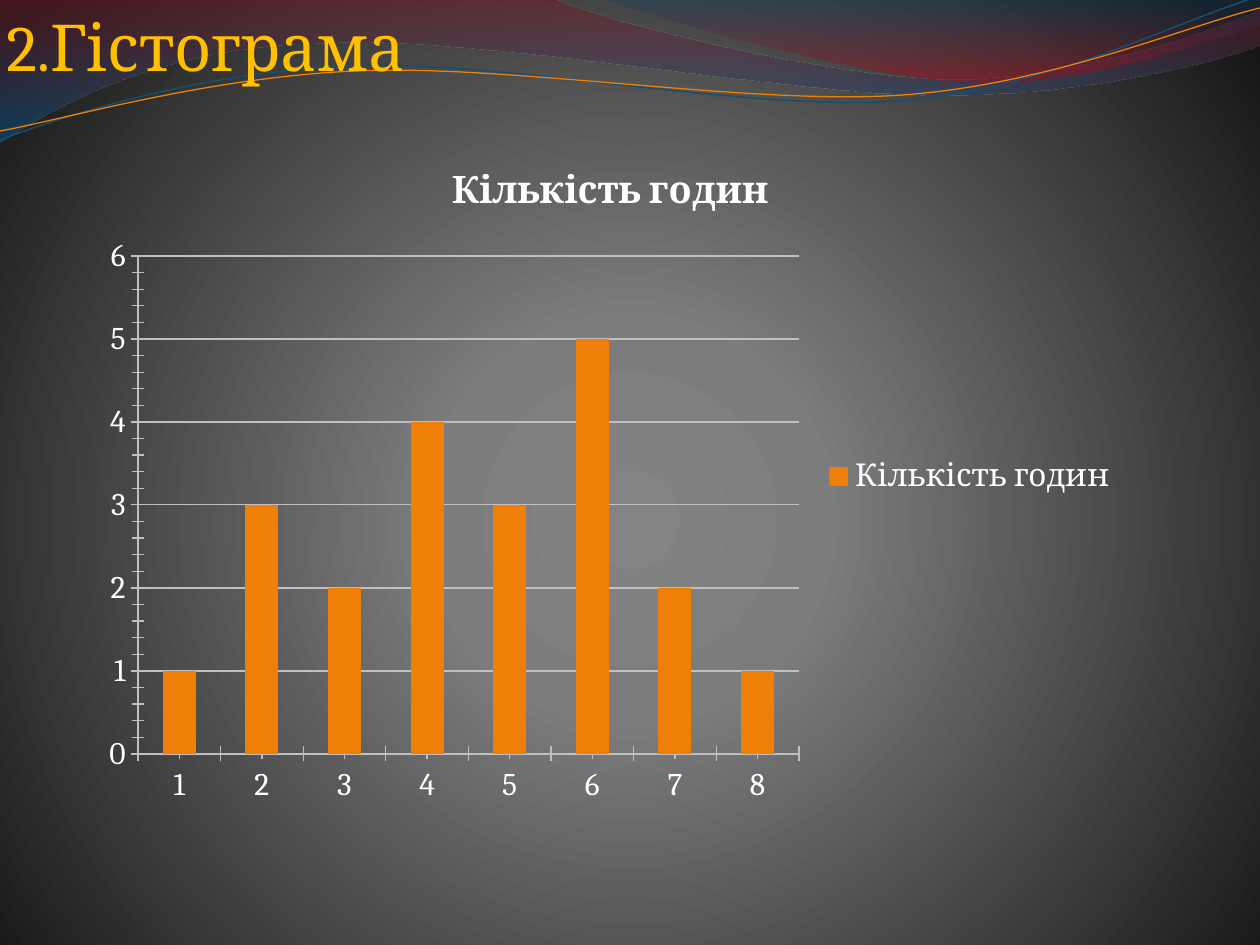
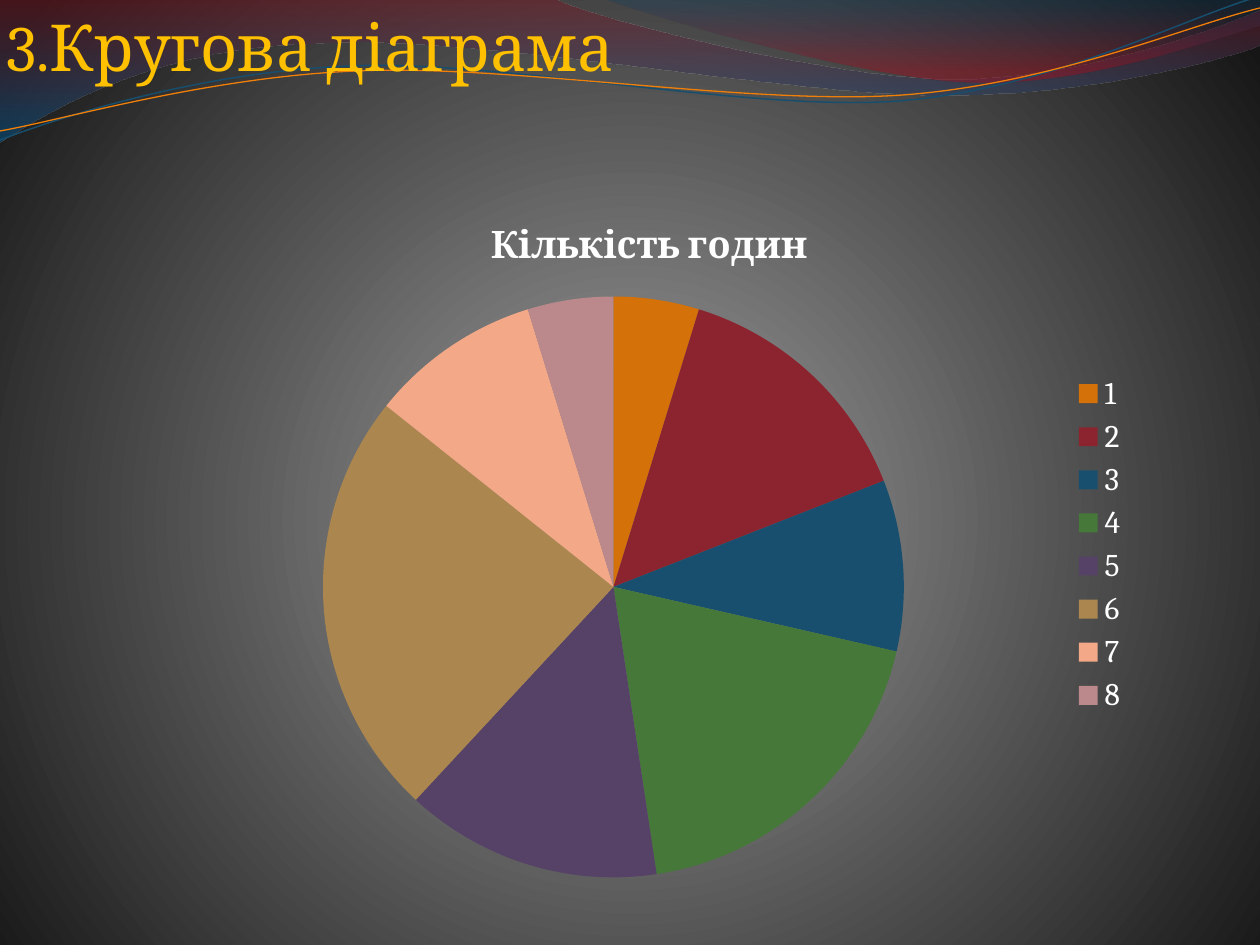
"""Build two slides that show study hours as a histogram and as a pie chart."""
from lxml import etree
from pptx import Presentation, util as u
from pptx.chart.data import CategoryChartData
from pptx.dml.color import RGBColor
from pptx.enum import chart as charts, text
from pptx.oxml import parse_xml
from pptx.oxml.ns import nsdecls, qn

EMU_PER_PX = 914400 / 126
FONT = "Cambria"
COLORS = {
    "title": "FFC000", "white": "FFFFFF", "axis": "C0C0C0",
    "orange": "F07F09", "blue": "184E6D",
}
PIE_COLORS = ["D57109", "8C242F", "184F6F", "46783A",
              "564167", "AB874F", "F3A887", "BB898B"]

SERIES_NAME = "Кількість годин"
HOURS = {"1": 1, "2": 3, "3": 2, "4": 4, "5": 3, "6": 5, "7": 2, "8": 1}
TITLE_BOX = (0, 0, 1071, 208)
SLIDES = [
    {"title": "2.Гістограма", "kind": charts.XL_CHART_TYPE.COLUMN_CLUSTERED,
     "frame": (88, 137, 1043, 679), "plot": (138, 256, 661, 498),
     "heading": (445, 158)},
    {"title": "3.Кругова діаграма", "kind": charts.XL_CHART_TYPE.PIE,
     "frame": (157, 193, 984, 703), "plot": (323, 296, 581, 582),
     "heading": (484, 213)},
]

BACKGROUND_STOPS = [(0, "848484", 100), (25, "7C7C7C", 100), (100, "161616", 100)]
RADIAL = ('<a:path path="circle"><a:fillToRect l="10000" t="110000" '
          'r="10000" b="100000"/></a:path>')
DOWNWARD = '<a:lin ang="5400000" scaled="1"/>'
WAVES = [
    {"start": (0, 0), "stops": [(0, "7E1621", 45), (100, "005689", 55)],
     "steps": [(554, -1), (600, 21, 837, 79, 955, 79),
               (1075, 79, 1207, 33, 1260, 11), (1261, 45),
               (1239, 55, 1096, 96, 940, 95), (784, 95, 481, 35, 324, 43),
               (163, 45, 58, 105, -1, 142)]},
    {"start": (604, -1), "stops": [(0, "094467", 30), (80, "A10F1F", 45)],
     "steps": [(641, 14, 859, 78, 969, 82), (1079, 87, 1211, 40, 1260, 26),
               (1260, 0)]},
    {"start": (0, 140), "line": ("blue", 0.85),
     "steps": [(60, 117, 199, 72, 349, 66), (498, 59, 747, 112, 898, 101),
               (1050, 89, 1182, 19, 1257, -3)]},
    {"start": (0, 131), "line": ("orange", 0.75),
     "steps": [(59, 121, 207, 77, 357, 71), (508, 64, 752, 106, 903, 95),
               (1053, 84, 1186, 26, 1260, 8)]},
]


def px(*lengths):
    return [u.Emu(round(length * EMU_PER_PX)) for length in lengths]


def rgb(name):
    return RGBColor.from_string(COLORS.get(name, name))


def paint_gradient(fill, element, stops, direction):
    fill.solid()
    solid = next(element.iter(qn("a:solidFill")))
    marks = "".join(
        f'<a:gs pos="{position * 1000}"><a:srgbClr val="{color}">'
        f'<a:alpha val="{alpha * 1000}"/></a:srgbClr></a:gs>'
        for position, color, alpha in stops)
    gradient = parse_xml(f'<a:gradFill {nsdecls("a")} rotWithShape="1">'
                         f'<a:gsLst>{marks}</a:gsLst>{direction}</a:gradFill>')
    solid.getparent().replace(solid, gradient)


def build_wave(slide, start, steps, closed):
    points = [pair for step in steps for pair in zip(step[::2], step[1::2])]
    builder = slide.shapes.build_freeform(*start, scale=EMU_PER_PX)
    builder.add_line_segments(points, close=closed)
    shape = builder.convert_to_shape()
    segments = iter(list(shape.element.iter(qn("a:lnTo"))))
    for step in steps:
        parts = [next(segments) for _ in range(len(step) // 2)]
        if len(parts) == 3:
            curve = etree.Element(qn("a:cubicBezTo"))
            parts[0].addprevious(curve)
            for part in parts:
                curve.append(part[0])
                part.getparent().remove(part)
    return shape


def add_waves(slide, master):
    for index, wave in enumerate(WAVES):
        shape = build_wave(slide, wave["start"], wave["steps"], "stops" in wave)
        shape.shadow.inherit = False
        if "stops" in wave:
            paint_gradient(shape.fill, shape.element, wave["stops"], DOWNWARD)
            shape.line.fill.background()
        else:
            color, width = wave["line"]
            shape.fill.background()
            shape.line.color.rgb = rgb(color)
            shape.line.width = u.Pt(width)
        shape.element.nvSpPr.cNvPr.id = 100 + index
        master.element.cSld.spTree.insert(2 + index, shape.element)


def format_font(font, size, color="white", bold=False):
    font.name, font.size, font.bold = FONT, u.Pt(size), bold
    font.color.rgb = rgb(color)


def write_text(frame, content, **style):
    paragraph = frame.paragraphs[0]
    run = paragraph.add_run()
    run.text = content
    format_font(run.font, **style)
    return paragraph


def add_title(slide, content):
    title = slide.shapes.title
    title.left, title.top, title.width, title.height = px(*TITLE_BOX)
    frame = title.text_frame
    frame.margin_left = frame.margin_right = u.Inches(0.05)
    frame.margin_top = frame.margin_bottom = u.Inches(0.05)
    frame.vertical_anchor = text.MSO_ANCHOR.TOP
    frame.auto_size = text.MSO_AUTO_SIZE.NONE
    frame.word_wrap = True
    paragraph = write_text(frame, content, size=37, color="title")
    paragraph.alignment = text.PP_ALIGN.LEFT
    paragraph.space_before = u.Pt(0)


def set_layout(parent, index, box, frame, inner=False):
    previous = parent.find(qn("c:layout"))
    if previous is not None:
        parent.remove(previous)
    layout = etree.Element(qn("c:layout"))
    manual = etree.SubElement(layout, qn("c:manualLayout"))
    left, top, width, height = frame
    shares = [(box[0] - left) / width, (box[1] - top) / height]
    shares += [length / whole for length, whole in zip(box[2:], (width, height))]
    settings = [("layoutTarget", "inner")] if inner else []
    settings += [("xMode", "edge"), ("yMode", "edge")]
    settings += [(name, f"{share:.4f}") for name, share in zip("xywh", shares)]
    for name, value in settings:
        etree.SubElement(manual, qn(f"c:{name}")).set("val", value)
    parent.insert(index, layout)


def format_columns(chart):
    chart.plots[0].gap_width = 150
    fill = chart.plots[0].series[0].format.fill
    fill.solid()
    fill.fore_color.rgb = rgb("orange")
    values = chart.value_axis
    values.minimum_scale, values.maximum_scale = 0, 6
    values.major_unit, values.minor_unit = 1, 0.2
    values.has_major_gridlines = True
    lines = [values.major_gridlines.format.line]
    for axis in (values, chart.category_axis):
        axis.major_tick_mark = axis.minor_tick_mark = charts.XL_TICK_MARK.CROSS
        lines.append(axis.format.line)
    for line in lines:
        line.color.rgb = rgb("axis")
        line.width = u.Pt(0.75)
    for mark in list(chart.element.iter(qn("c:delete"))):
        mark.getparent().remove(mark)


def format_pie(chart):
    for index, color in enumerate(PIE_COLORS):
        fill = chart.plots[0].series[0].points[index].format.fill
        fill.solid()
        fill.fore_color.rgb = rgb(color)


def add_hours_chart(slide, kind, frame, plot, heading):
    data = CategoryChartData()
    data.categories = list(HOURS)
    data.add_series(SERIES_NAME, list(HOURS.values()))
    chart = slide.shapes.add_chart(kind, *px(*frame), data).chart
    format_font(chart.font, size=18)
    chart.has_title = True
    write_text(chart.chart_title.text_frame, SERIES_NAME, size=21.6, bold=True)
    chart.has_legend = True
    chart.legend.position = charts.XL_LEGEND_POSITION.RIGHT
    chart.legend.include_in_layout = False
    is_pie = kind == charts.XL_CHART_TYPE.PIE
    chart.plots[0].vary_by_categories = is_pie
    (format_pie if is_pie else format_columns)(chart)
    set_layout(next(chart.element.iter(qn("c:title"))), 1, heading, frame)
    set_layout(next(chart.element.iter(qn("c:plotArea"))), 0, plot, frame, inner=True)


def main():
    presentation = Presentation()
    presentation.slide_width, presentation.slide_height = px(1260, 945)
    master = presentation.slide_master
    paint_gradient(master.background.fill, master.element.cSld.find(qn("p:bg")),
                   BACKGROUND_STOPS, RADIAL)
    for index, content in enumerate(SLIDES):
        slide = presentation.slides.add_slide(presentation.slide_layouts[5])
        if index == 0:
            add_waves(slide, master)
        add_title(slide, content["title"])
        add_hours_chart(slide, content["kind"], content["frame"],
                        content["plot"], content["heading"])
    presentation.save("out.pptx")


if __name__ == "__main__":
    main()
